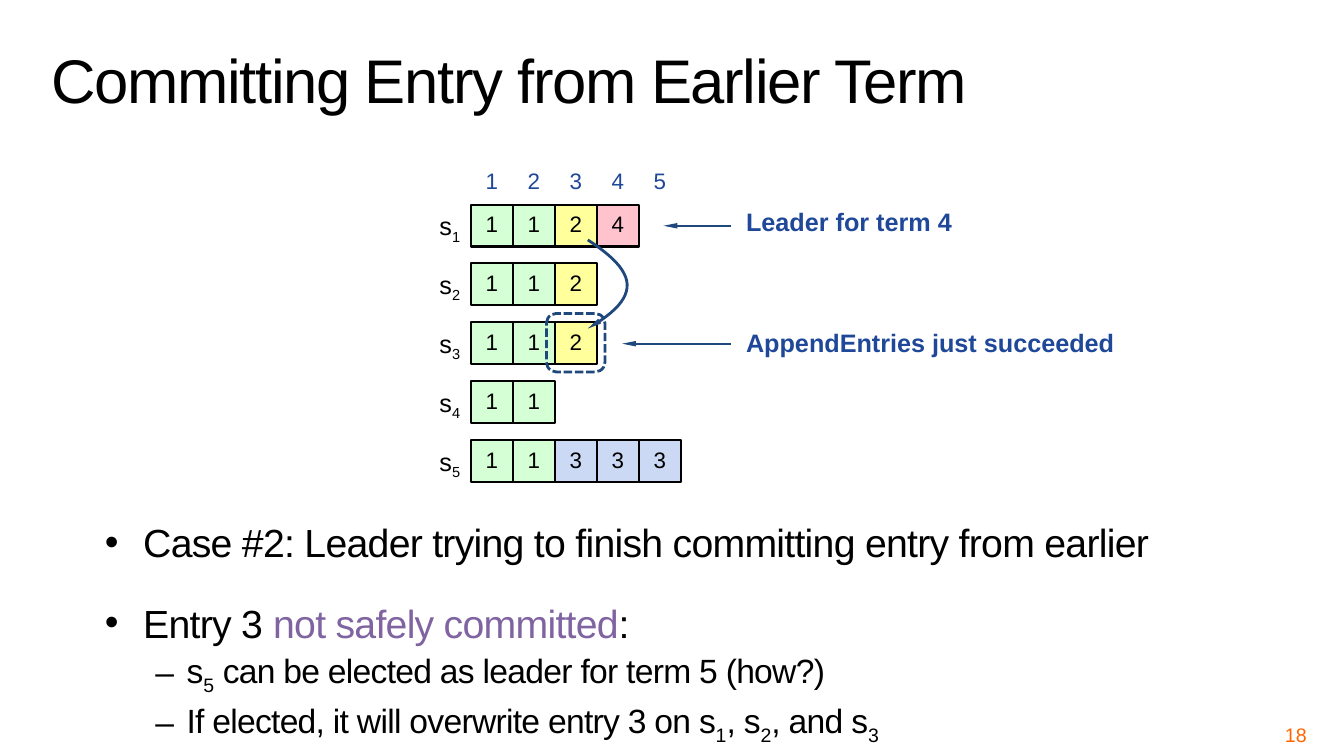
"""Build the slide on committing an entry from an earlier term."""
from lxml import etree
from pptx import Presentation
from pptx.dml.color import RGBColor
from pptx.enum import dml, shapes, text
from pptx.oxml import ns
from pptx.util import Inches, Pt

BLACK = RGBColor(0x00, 0x00, 0x00)
BLUE = RGBColor(0x1F, 0x48, 0x99)
NAVY = RGBColor(0x1F, 0x49, 0x7D)
PURPLE = RGBColor(0x80, 0x64, 0xA2)
ORANGE = RGBColor(0xFF, 0x66, 0x00)
TERM_FILLS = {
    1: RGBColor(0xD5, 0xFF, 0xD5),
    2: RGBColor(0xFF, 0xFF, 0x9B),
    3: RGBColor(0xCC, 0xD9, 0xF4),
    4: RGBColor(0xFF, 0xC3, 0xCE),
}
SERVER_LOGS = [(1, 1, 2, 4), (1, 1, 2), (1, 1, 2), (1, 1), (1, 1, 3, 3, 3)]
CELL = 5 / 12
ROW_STEP = 7 / 12
LEFT, CENTER, RIGHT = text.PP_ALIGN.LEFT, text.PP_ALIGN.CENTER, text.PP_ALIGN.RIGHT
TOP, MIDDLE, BOTTOM = text.MSO_ANCHOR.TOP, text.MSO_ANCHOR.MIDDLE, text.MSO_ANCHOR.BOTTOM


def add_span(para, words, size=16, color=BLACK, bold=False, tracking=0, sub=False):
    """Append one formatted run to a paragraph."""
    span = para.add_run()
    span.text = words
    span.font.name = "Arial"
    span.font.size = Pt(size)
    span.font.bold = bold
    span.font.color.rgb = color
    props = span.font._element
    if tracking:
        props.set("spc", str(round(tracking * 100)))
    if sub:
        props.set("baseline", "-25000")


def write(shape, spans, align=LEFT, anchor=TOP, inset=(0, 0), spacing=None, **font):
    """Fill a shape with one paragraph of (words, overrides) spans."""
    frame = shape.text_frame
    frame.word_wrap = True
    frame.vertical_anchor = anchor
    frame.margin_left = frame.margin_right = Inches(inset[0])
    frame.margin_top = frame.margin_bottom = Inches(inset[1])
    para = frame.paragraphs[0]
    para.alignment = align
    if spacing:
        para.line_spacing = spacing
    for words, overrides in spans:
        add_span(para, words, **{**font, **overrides})


def add_label(page, box, spans, **style):
    """Place a text box and write its spans."""
    label = page.shapes.add_textbox(*map(Inches, box))
    write(label, spans, **style)
    return label


def add_arrowhead(line_shape, width):
    """Style a line and end it with a slim triangle."""
    line_shape.line.color.rgb = NAVY
    line_shape.line.width = Pt(width)
    head = etree.SubElement(line_shape.line._get_or_add_ln(), ns.qn("a:tailEnd"))
    for key, value in (("type", "triangle"), ("w", "sm"), ("len", "lg")):
        head.set(key, value)


def add_log_cell(page, left, top, term):
    """Draw one log entry coloured by its term."""
    cell = page.shapes.add_shape(
        shapes.MSO_SHAPE.RECTANGLE, *map(Inches, (left, top, CELL, CELL)))
    cell.shadow.inherit = False
    cell.fill.solid()
    cell.fill.fore_color.rgb = TERM_FILLS[term]
    cell.line.color.rgb = BLACK
    cell.line.width = Pt(1.5)
    write(cell, [(str(term), {})], align=CENTER, anchor=MIDDLE, spacing=Pt(17))


def add_logs(page, left, top):
    """Draw the index header and the five server logs."""
    for column in range(5):
        add_label(page, (left + column * CELL, top - CELL, CELL, 0.37),
                  [(str(column + 1), {})], align=CENTER, inset=(0.1, 0.05), color=BLUE)
    for row, terms in enumerate(SERVER_LOGS):
        row_top = top + row * ROW_STEP
        add_label(page, (left - CELL, row_top + 0.06, CELL, 0.3),
                  [("s", {}), (str(row + 1), {"sub": True})], align=CENTER, size=18)
        for column, term in enumerate(terms):
            add_log_cell(page, left + column * CELL, row_top, term)


def add_callout(page, box, words, tip, arrow_y):
    """Write a note and point an arrow from it to the logs."""
    add_label(page, box, [(words, {})], spacing=Pt(19), size=18, color=BLUE, bold=True)
    arrow = page.shapes.add_connector(
        shapes.MSO_CONNECTOR.STRAIGHT,
        *map(Inches, (box[0] - 0.15, arrow_y, tip, arrow_y)))
    add_arrowhead(arrow, 1.5)
    etree.SubElement(arrow._element.spPr, ns.qn("a:effectLst"))


def add_replication(page, left, top):
    """Frame the copied entry and draw the curve that leads to it."""
    frame = page.shapes.add_shape(
        shapes.MSO_SHAPE.ROUNDED_RECTANGLE,
        *map(Inches, (left - 0.41, top + 0.73, 0.58, 0.58)))
    frame.shadow.inherit = False
    frame.fill.background()
    frame.line.color.rgb = NAVY
    frame.line.width = Pt(2)
    frame.line.dash_style = dml.MSO_LINE.SQUARE_DOT

    controls = [(0, 0), (0.49, 0.32), (0.55, 0.56), (0, 0.88)]
    points = []
    for step in range(25):
        t = step / 24
        weights = ((1 - t) ** 3, 3 * t * (1 - t) ** 2, 3 * t * t * (1 - t), t ** 3)
        x, y = (sum(w * c[axis] for w, c in zip(weights, controls)) for axis in (0, 1))
        points.append((Inches(left + x), Inches(top + y)))
    builder = page.shapes.build_freeform(*points[0])
    builder.add_line_segments(points[1:], close=False)
    curve = builder.convert_to_shape()
    curve.shadow.inherit = False
    curve.fill.background()
    add_arrowhead(curve, 2)


def add_bullets(page, box):
    """Write the two bullets and their sub-points."""
    sub = {"sub": True}
    items = [
        (0, 5.6, [("Case #2: Leader trying to finish committing entry from earlier", {})]),
        (0, 24, [("Entry 3 ", {}), ("not safely committed", {"color": PURPLE}), (":", {})]),
        (1, 3, [("s", {}), ("5", sub), (" can be elected as leader for term 5 (how?)", {})]),
        (1, 3, [("If elected, it will overwrite entry 3 on s", {}), ("1", sub), (", s", {}),
                ("2", sub), (", and s", {}), ("3", sub)]),
    ]
    levels = [(28, 0.38, 0.38, "•"), (24, 0.81, 0.31, "–")]
    body = add_label(page, box, [], inset=(0.04, 0.04))
    frame = body.text_frame
    for number, (level, before, spans) in enumerate(items):
        para = frame.add_paragraph() if number else frame.paragraphs[0]
        size, margin, hang, mark = levels[level]
        para.level = level
        para.space_before = Pt(before)
        props = para._p.get_or_add_pPr()
        props.set("marL", str(Inches(margin)))
        props.set("indent", str(-Inches(hang)))
        etree.SubElement(props, ns.qn("a:buFont")).set("typeface", "Arial")
        etree.SubElement(props, ns.qn("a:buChar")).set("char", mark)
        for words, overrides in spans:
            add_span(para, words, size=size, tracking=-0.5, **overrides)


def main():
    """Assemble and save the slide."""
    deck = Presentation()
    deck.slide_width, deck.slide_height = Inches(13.33), Inches(7.5)
    page = deck.slides.add_slide(deck.slide_layouts[6])
    add_bullets(page, (1, 5.1, 11.79, 2.49))
    add_label(page, (9.89, 7.17, 3.11, 0.23), [("18", {})], align=RIGHT, anchor=MIDDLE,
              inset=(0.04, 0.04), size=14, color=ORANGE)
    add_label(page, (0.41, 0.02, 12.62, 1.17), [("Committing Entry from Earlier Term", {})],
              anchor=BOTTOM, inset=(0.1, 0.05), spacing=0.8, size=44, tracking=-1)
    add_logs(page, 4.67, 2.03)
    add_replication(page, 5.83, 2.38)
    add_callout(page, (7.4, 3.28, 4.23, 0.27), "AppendEntries just succeeded", 6.17, 3.41)
    add_callout(page, (7.4, 2.08, 2.17, 0.27), "Leader for term 4", 6.58, 2.24)
    deck.save("out.pptx")


if __name__ == "__main__":
    main()
